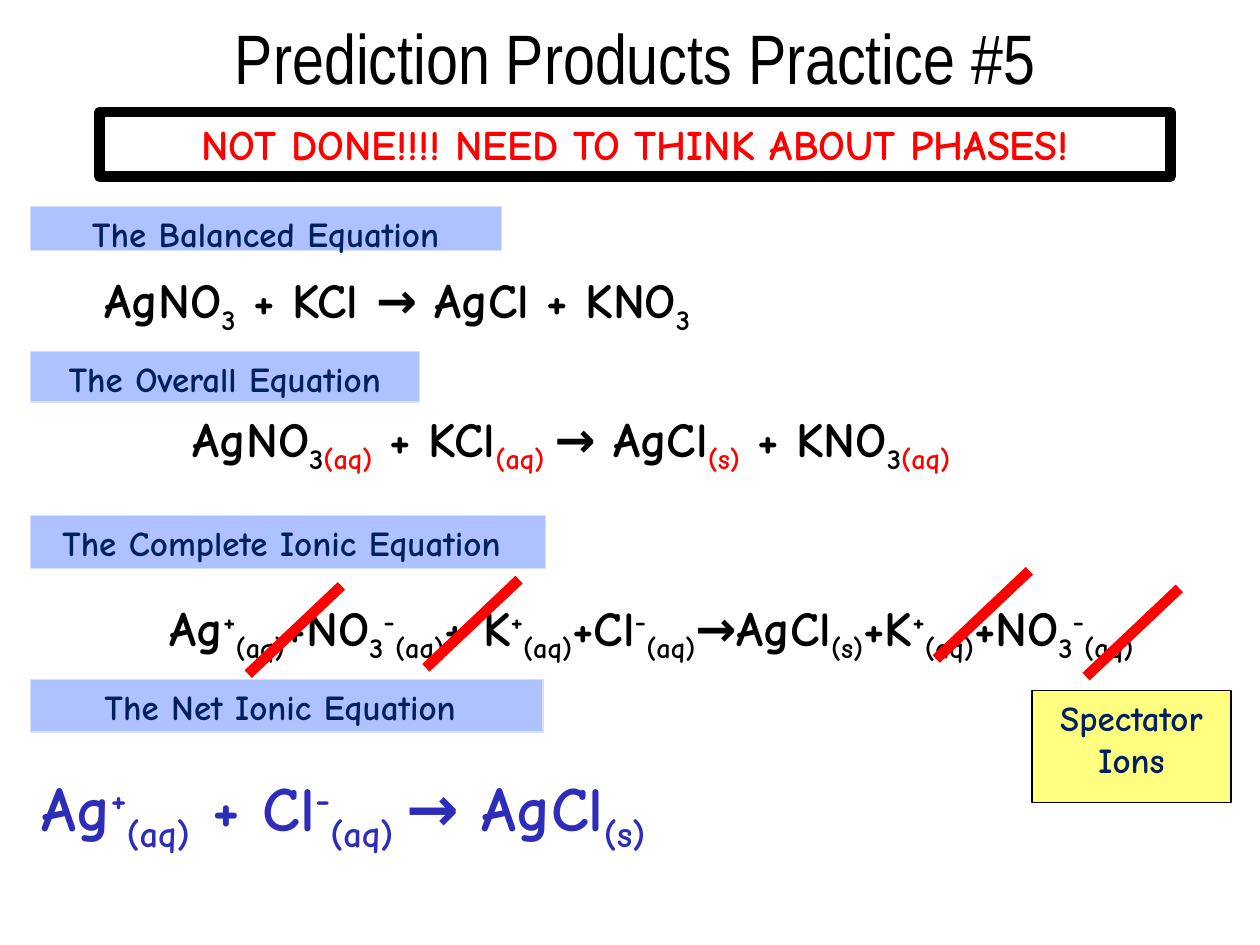
from lxml import etree
from pptx import Presentation
from pptx.dml.color import RGBColor
from pptx.enum.shapes import MSO_CONNECTOR, MSO_SHAPE
from pptx.enum.text import MSO_ANCHOR, PP_ALIGN
from pptx.oxml.ns import qn
from pptx.util import Inches, Pt

COLORS = {
    "black": "000000", "white": "FFFFFF", "red": "FF0000", "navy": "002060",
    "blue": "2D2DB9", "label": "ADC2FF", "label_edge": "D6E0FF", "yellow": "FFFF80",
}
BASELINES = {"sub": -25000, "phase": -25000, "sup": 30000}
BODY_FONT = "Comic Neue"

TITLE = "Prediction Products Practice #5"
TITLE_BOX = (0.25, 0.01, 9.58, 0.88)

PANELS = [
    ("NOT DONE!!!! NEED TO THINK ABOUT PHASES!", (0.79, 0.89, 8.5, 0.51),
     "white", "black", 6, 24, "red"),
    ("Spectator Ions", (8.19, 5.48, 1.58, 0.89), "yellow", "black", 0.75, 20, "navy"),
]

LABEL_LEFT = 0.24
LABELS = [
    ("The Balanced Equation", 1.64, 3.74, 0.35),
    ("The Overall Equation", 2.79, 3.09, 0.4),
    ("The Complete Ionic Equation ", 4.09, 4.09, 0.42),
    ("The Net Ionic Equation ", 5.39, 4.07, 0.42),
]

AQ, SOLID = ("(aq)", "sub"), ("(s)", "sub")
PLUS, MINUS = ("+", "sup"), ("-", "sup")
THREE = ("3", "sub")
NITRATE = [("+NO", ""), THREE, MINUS, AQ]

EQUATIONS = [
    ((0.23, 2.09, 5.85, 0.57), 28, "black", PP_ALIGN.CENTER,
     [("AgNO", ""), THREE, (" + KCl → AgCl + KNO", ""), THREE]),
    ((-0.59, 3.19, 10.25, 0.57), 28, "black", PP_ALIGN.CENTER,
     [("AgNO", ""), THREE, ("(aq)", "phase"), (" + KCl", ""), ("(aq) ", "phase"),
      ("→ AgCl", ""), ("(s)", "phase"), (" + KNO", ""), THREE, ("(aq)", "phase")]),
    ((0.17, 4.69, 10, 0.89), 28, "black", PP_ALIGN.CENTER,
     [("Ag", ""), PLUS, AQ, *NITRATE, ("+ K", ""), PLUS, AQ, ("+Cl", ""), MINUS, AQ,
      ("→AgCl", ""), SOLID, ("+K", ""), PLUS, AQ, *NITRATE]),
    ((0.23, 6.05, 10, 0.71), 36, "blue", PP_ALIGN.LEFT,
     [("Ag", ""), PLUS, AQ, (" + Cl", ""), MINUS, ("(aq) ", "sub"),
      ("→ AgCl", ""), SOLID]),
]

STRIKE_WIDTH, STRIKE_HEIGHT = 0.74, 0.7
STRIKES = [(3.38, 4.6), (7.43, 4.53), (1.97, 4.65), (8.62, 4.67)]


def rgb(name):
    return RGBColor.from_string(COLORS[name])


def inches(box):
    return [Inches(value) for value in box]


def write(frame, runs, size, color, align=PP_ALIGN.CENTER, font=BODY_FONT, bold=True):
    frame.word_wrap = True
    paragraph = frame.paragraphs[0]
    paragraph.alignment = align
    for text, level in runs:
        run = paragraph.add_run()
        run.text = text
        run.font.name = font
        run.font.size = Pt(size)
        run.font.bold = bold
        run.font.color.rgb = rgb("red" if level == "phase" else color)
        if level:
            run.font._element.set("baseline", str(BASELINES[level]))


def add_panel(slide, text, box, fill, edge, edge_width, size, color):
    panel = slide.shapes.add_shape(MSO_SHAPE.RECTANGLE, *inches(box))
    panel.shadow.inherit = False
    panel.fill.solid()
    panel.fill.fore_color.rgb = rgb(fill)
    panel.line.color.rgb = rgb(edge)
    panel.line.width = Pt(edge_width)
    panel.text_frame.vertical_anchor = MSO_ANCHOR.TOP
    write(panel.text_frame, [(text, "")], size, color)


def add_strike(slide, left, top):
    strike = slide.shapes.add_connector(
        MSO_CONNECTOR.STRAIGHT,
        *inches((left + STRIKE_WIDTH, top, left, top + STRIKE_HEIGHT)))
    strike.line.color.rgb = rgb("red")
    strike.line.width = Pt(6)
    etree.SubElement(strike._element.spPr, qn("a:effectLst"))


def main():
    prs = Presentation()
    prs.slide_width, prs.slide_height = Inches(10), Inches(7.5)
    slide = prs.slides.add_slide(prs.slide_layouts[5])

    title = slide.shapes.title
    title.left, title.top, title.width, title.height = inches(TITLE_BOX)
    title.text_frame.vertical_anchor = MSO_ANCHOR.MIDDLE
    write(title.text_frame, [(TITLE, "")], 40, "black", font="Arial Narrow", bold=False)

    for text, top, width, height in LABELS:
        add_panel(slide, text, (LABEL_LEFT, top, width, height),
                  "label", "label_edge", 0.75, 20, "navy")
    for panel in PANELS:
        add_panel(slide, *panel)
    for box, size, color, align, runs in EQUATIONS:
        equation = slide.shapes.add_textbox(*inches(box))
        write(equation.text_frame, runs, size, color, align)
    for left, top in STRIKES:
        add_strike(slide, left, top)

    prs.save("out.pptx")


if __name__ == "__main__":
    main()
